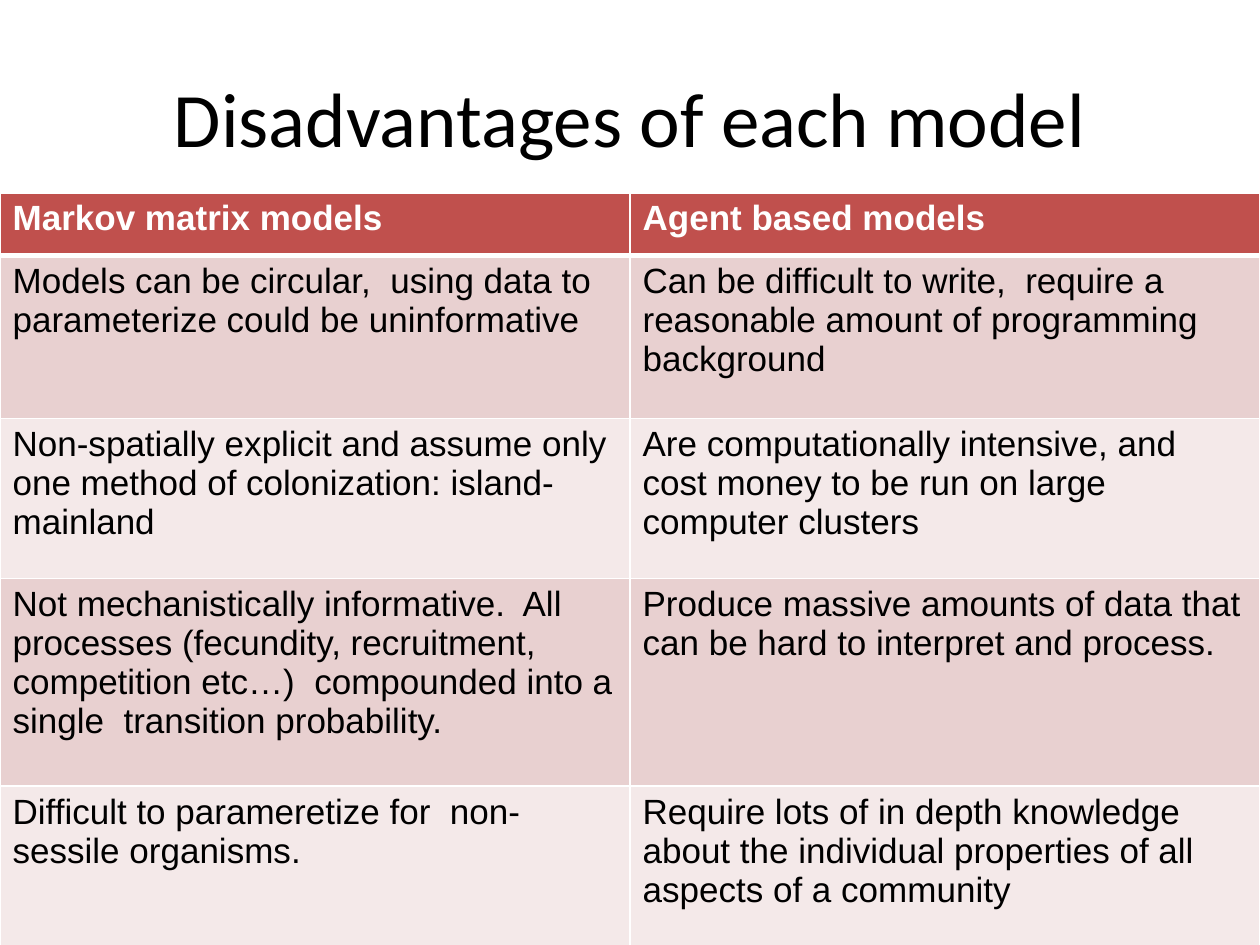
from lxml import etree
from pptx import Presentation
from pptx import util as u
from pptx.dml.color import RGBColor
from pptx.enum import text
from pptx.oxml import ns

BLACK = RGBColor(0x00, 0x00, 0x00)
WHITE = RGBColor(0xFF, 0xFF, 0xFF)
RED = RGBColor(0xC0, 0x50, 0x4D)
ROSE = RGBColor(0xE8, 0xD0, 0xD0)
BLUSH = RGBColor(0xF4, 0xE9, 0xE9)

ROWS = [
    ("Markov matrix models", "Agent based models"),
    ("Models can be circular,  using data to parameterize could be uninformative",
     "Can be difficult to write,  require a reasonable amount of programming background"),
    ("Non-spatially explicit and assume only one method of colonization: island-mainland",
     "Are computationally intensive, and cost money to be run on large computer clusters"),
    ("Not mechanistically informative.  All processes (fecundity, recruitment, "
     "competition etc…)  compounded into a single  transition probability.",
     "Produce massive amounts of data that can be hard to interpret and process."),
    ("Difficult to parameretize for  non-sessile organisms.",
     "Require lots of in depth knowledge about the individual properties of all "
     "aspects of a community"),
]
HEIGHTS = [0.5, 1.29, 1.27, 1.65, 1.27]


def edge(cell, **widths):
    """Draw white cell borders; widths in points, keyed L, R, T, B."""
    props = cell._tc.get_or_add_tcPr()
    for spot, (side, width) in enumerate(widths.items()):
        line = etree.Element(ns.qn(f"a:ln{side}"), w=str(u.Pt(width)))
        fill = etree.SubElement(line, ns.qn("a:solidFill"))
        etree.SubElement(fill, ns.qn("a:srgbClr"), val=str(WHITE))
        props.insert(spot, line)


class Deck:
    """Holds the text style and the current slide; places are shares of its size."""

    def __init__(self, wide, high):
        self.prs = Presentation()
        self.prs.slide_width, self.prs.slide_height = u.Inches(wide), u.Inches(high)
        self.slide = self.prs.slides.add_slide(self.prs.slide_layouts[6])

    def area(self, left, top, width, height):
        wide, high = self.prs.slide_width, self.prs.slide_height
        return [int(n) for n in (left * wide, top * high, width * wide, height * high)]

    def label(self, frame, words, face, size, color, bold=False):
        frame.word_wrap = True
        frame.text = words
        para = frame.paragraphs[0]
        font = para.font
        font.name, font.size, font.bold = face, u.Pt(size), bold
        font.color.rgb = color
        return para

    def title(self, words, *place):
        frame = self.slide.shapes.add_textbox(*self.area(*place)).text_frame
        frame.vertical_anchor = text.MSO_ANCHOR.MIDDLE
        self.label(frame, words, "Calibri", 44, BLACK).alignment = text.PP_ALIGN.CENTER

    def table(self, rows, heights, *place):
        grid = self.slide.shapes.add_table(
            len(rows), len(rows[0]), *self.area(*place)).table
        for r, (words, height) in enumerate(zip(rows, heights)):
            grid.rows[r].height = u.Inches(height)
            head = r == 0
            for c, word in enumerate(words):
                cell = grid.cell(r, c)
                cell.fill.solid()
                cell.fill.fore_color.rgb = RED if head else (BLUSH, ROSE)[r % 2]
                edge(cell, L=1, R=1, T=3 if r == 1 else 1, B=3 if head else 1)
                self.label(cell.text_frame, word, "Arial", 20,
                           WHITE if head else BLACK, head)


def main():
    deck = Deck(10, 7.5)
    deck.title("Disadvantages of each model", 0.05, 0.04, 0.9, 1 / 6)
    deck.table(ROWS, HEIGHTS, 0, 1.53 / 7.5, 1, 5.97 / 7.5)
    deck.prs.save("out.pptx")


if __name__ == "__main__":
    main()
